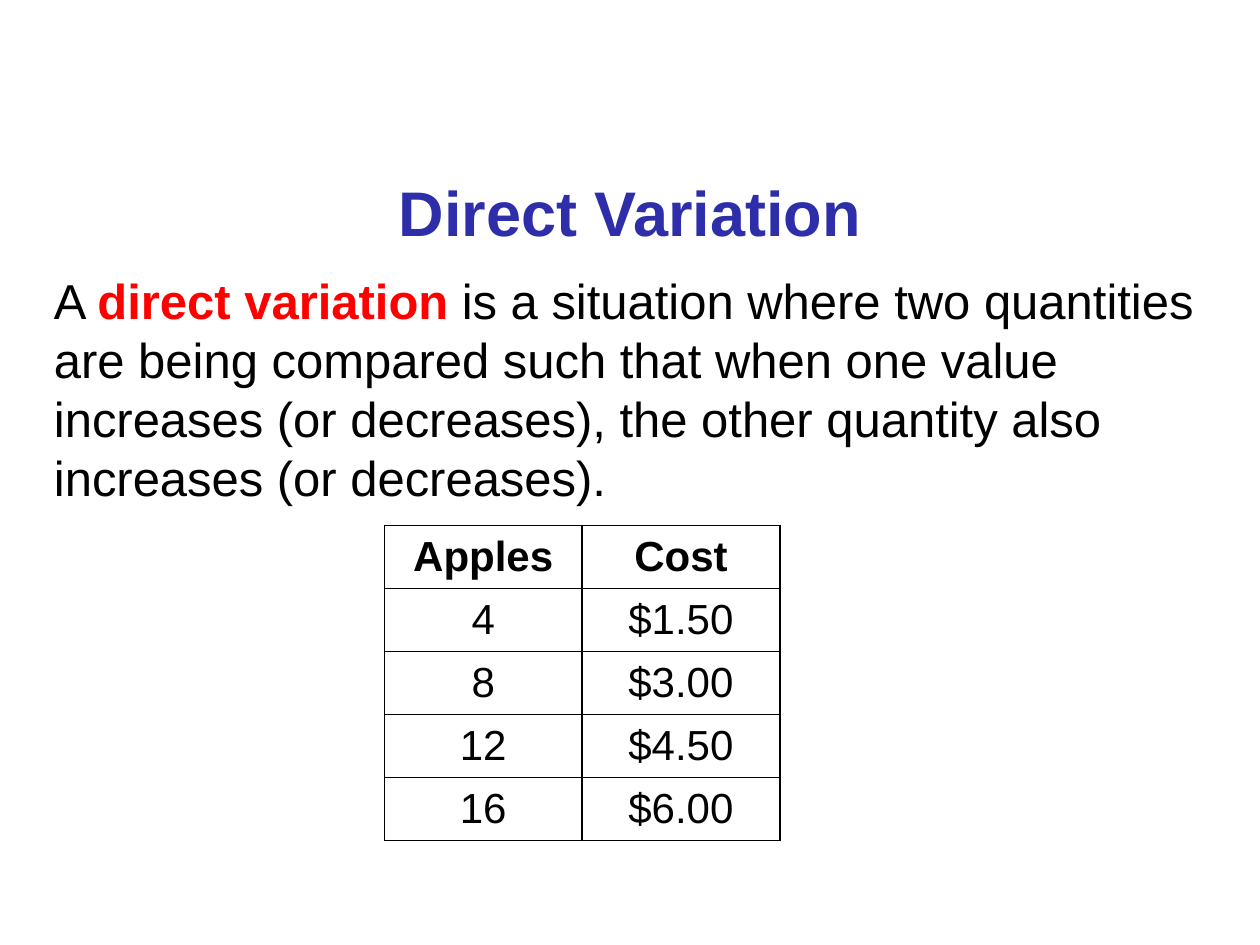
from lxml.etree import SubElement
from pptx import Presentation
from pptx.dml.color import RGBColor
from pptx.enum.text import MSO_ANCHOR, MSO_AUTO_SIZE, PP_ALIGN
from pptx.oxml.ns import qn
from pptx.util import Inches, Pt

BLACK, WHITE, RED, BLUE = "000000", "FFFFFF", "FF0000", "2E2EAA"
PRICES = [("Apples", "Cost"), ("4", "$1.50"), ("8", "$3.00"),
          ("12", "$4.50"), ("16", "$6.00")]


def color(value):
    return RGBColor.from_string(value)


def add_span(para, text, size, fill=BLACK, bold=False):
    span = para.add_run()
    span.text = text
    span.font.name = "Arial"
    span.font.size = Pt(size)
    span.font.bold = bold
    span.font.color.rgb = color(fill)


def add_text(page, left, top, width, height, spans, size,
             align=PP_ALIGN.LEFT, wrap=True):
    """Add a one-paragraph box; spans are (text, colour, bold)."""
    box = page.shapes.add_textbox(Inches(left), Inches(top),
                                  Inches(width), Inches(height))
    frame = box.text_frame
    frame.word_wrap = wrap
    frame.auto_size = MSO_AUTO_SIZE.SHAPE_TO_FIT_TEXT
    para = frame.paragraphs[0]
    para.alignment = align
    for text, fill, bold in spans:
        add_span(para, text, size, fill, bold)


def add_borders(cell, fill, width):
    properties = cell._tc.get_or_add_tcPr()
    for side in ("lnL", "lnR", "lnT", "lnB"):
        line = SubElement(properties, qn(f"a:{side}"), w=str(Pt(width)))
        solid = SubElement(line, qn("a:solidFill"))
        SubElement(solid, qn("a:srgbClr"), val=fill)


def add_price_table(page, left, top, column_width, row_height):
    rows, columns = len(PRICES), len(PRICES[0])
    table = page.shapes.add_table(
        rows, columns, Inches(left), Inches(top),
        Inches(column_width * columns), Inches(row_height * rows)).table
    for row, values in enumerate(PRICES):
        for column, value in enumerate(values):
            cell = table.cell(row, column)
            add_borders(cell, BLACK, 1)
            cell.fill.solid()
            cell.fill.fore_color.rgb = color(WHITE)
            cell.vertical_anchor = MSO_ANCHOR.MIDDLE
            para = cell.text_frame.paragraphs[0]
            para.alignment = PP_ALIGN.CENTER
            add_span(para, value, 24, bold=row == 0)


def main():
    deck = Presentation()
    deck.slide_width, deck.slide_height = Inches(10), Inches(7.5)
    page = deck.slides.add_slide(deck.slide_layouts[6])
    add_text(page, 3.05, 1.33, 3.9, 0.71,
             [("Direct Variation", BLUE, True)], 36, PP_ALIGN.CENTER, wrap=False)
    add_text(page, 0.33, 2.1, 9.33, 1.99, [
        ("A ", BLACK, False),
        ("direct variation", RED, True),
        (" is a situation where two quantities are being compared such that "
         "when one value increases (or decreases), the other quantity also "
         "increases (or decreases).", BLACK, False),
    ], 28)
    add_price_table(page, 3.05, 4.17, 1.57, 0.5)
    deck.save("out.pptx")


if __name__ == "__main__":
    main()
